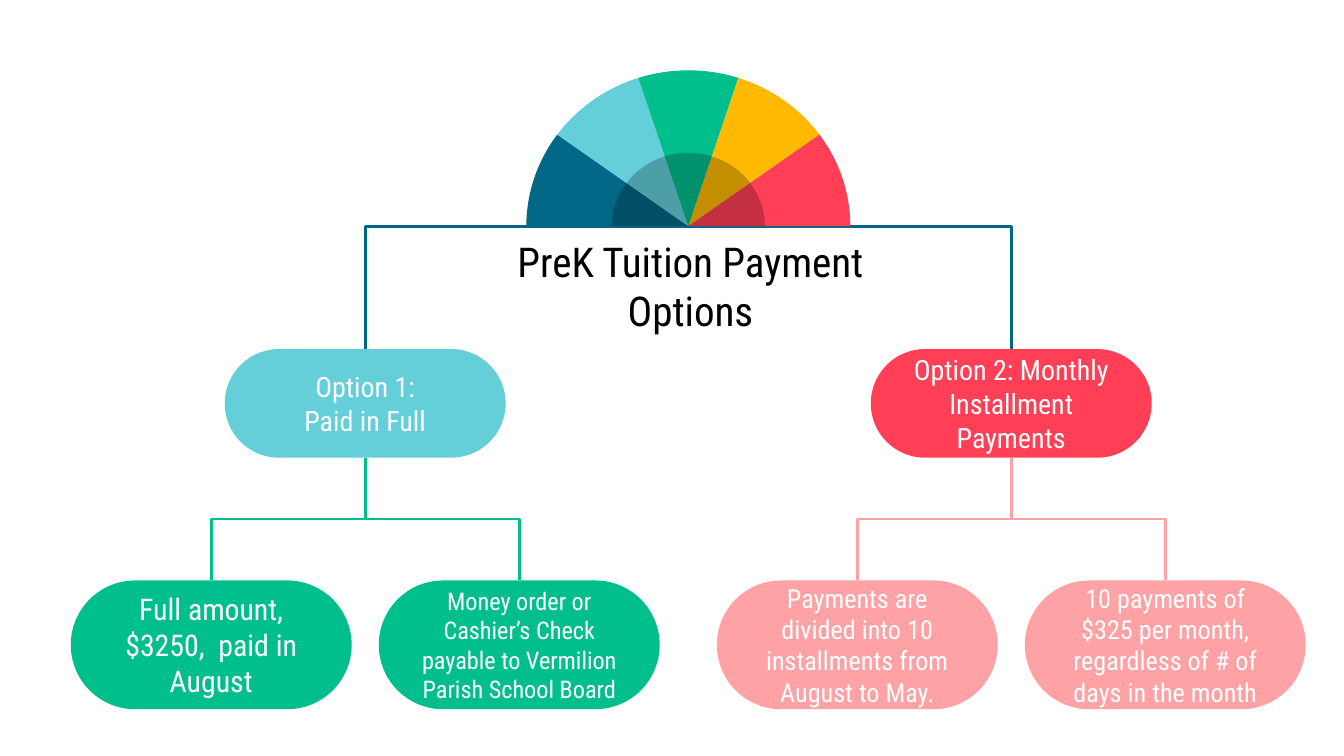
import math

from lxml import etree
from pptx import Presentation
from pptx.dml.color import RGBColor
from pptx.enum import shapes, text
from pptx.oxml.ns import qn
from pptx.util import Pt

FONT = "Roboto Condensed"
NAVY, SKY, GREEN, AMBER, RED, PINK = "016786", "64CFD9", "01BF8D", "FFB900", "FF3F56", "FFA2A6"
HUB_X, HUB_Y = 368.8, 121.2
NODE_WIDTH = 150.5
BRANCHES = [
    (37.9, SKY, GREEN, ("Option 1:\nPaid in Full", 15), [
        ("Full amount, $3250,  paid in August", 16),
        ("Money order or Cashier’s Check payable to Vermilion Parish School Board", 13)]),
    (384, RED, PINK, ("Option 2: Monthly Installment Payments", 15), [
        ("Payments are divided into 10 installments from August to May.", 14),
        ("10 payments of $325 per month, regardless of # of days in the month", 14)]),
]


def color(value):
    """Turn a hex string into a colour."""
    return RGBColor.from_string(value)


def paint(shape, fill, opacity=None):
    """Give a shape a plain fill without line or shadow."""
    shape.shadow.inherit = False
    shape.line.fill.background()
    shape.fill.solid()
    shape.fill.fore_color.rgb = color(fill)
    if opacity is not None:
        tint = shape.fill._xPr.find(f"{qn('a:solidFill')}/{qn('a:srgbClr')}")
        etree.SubElement(tint, qn("a:alpha")).set("val", str(opacity * 1000))


def write(shape, content, size, ink, anchor):
    """Put centred text into a shape with even margins."""
    frame = shape.text_frame
    frame.word_wrap = True
    frame.auto_size = text.MSO_AUTO_SIZE.NONE
    frame.vertical_anchor = anchor
    frame.margin_left = frame.margin_right = frame.margin_top = frame.margin_bottom = Pt(7.2)
    frame.text = content
    for paragraph in frame.paragraphs:
        paragraph.alignment = text.PP_ALIGN.CENTER
        for run in paragraph.runs:
            run.font.name, run.font.size = FONT, Pt(size)
            run.font.color.rgb = color(ink)


def add_node(slide, left, top, height, fill, label):
    """Add one pill with its label."""
    node = slide.shapes.add_shape(shapes.MSO_SHAPE.ROUNDED_RECTANGLE,
                                  Pt(left), Pt(top), Pt(NODE_WIDTH), Pt(height))
    node.adjustments[0] = 0.5
    paint(node, fill)
    write(node, *label, "FFFFFF", text.MSO_ANCHOR.MIDDLE)
    return node


def add_elbow(slide, start, end, ink):
    """Add an elbow connector between two points."""
    elbow = slide.shapes.add_connector(shapes.MSO_CONNECTOR.ELBOW, *start, *end)
    elbow.line.color.rgb = color(ink)
    elbow.line.width = Pt(1.5)
    etree.SubElement(elbow._element.spPr, qn("a:effectLst"))
    return elbow


def join_down(slide, parent, child, ink):
    """Join the bottom of a parent to the top of a child, leaving vertically."""
    start = (parent.left + parent.width // 2, parent.top + parent.height)
    end = (child.left + child.width // 2, child.top)
    elbow = add_elbow(slide, start, end, ink)
    elbow.begin_connect(parent, 2)
    elbow.end_connect(child, 0)
    run, drop = abs(end[0] - start[0]), end[1] - start[1]
    elbow.left = (start[0] + end[0] - drop) // 2
    elbow.top = (start[1] + end[1] - run) // 2
    elbow.width, elbow.height = drop, run
    rightward = end[0] > start[0]
    frame = elbow._element.spPr.find(qn("a:xfrm"))
    frame.set("rot", str((270 if rightward else 90) * 60000))
    frame.set("flipH", str(int(rightward)))


def add_branch(slide, left, top, fill, leaf_fill, label, leaves):
    """Add an option, its two leaves and all lines leading to them."""
    gap = 14.5
    width = 2 * NODE_WIDTH + gap
    option = add_node(slide, left + (width - NODE_WIDTH) / 2, top, 58.2, fill, label)
    trunk = add_elbow(slide, (Pt(HUB_X), Pt(HUB_Y)),
                      (option.left + option.width // 2, option.top), NAVY)
    trunk._element.spPr.find(qn("a:prstGeom")).set("prst", "bentConnector2")
    for index, leaf_label in enumerate(leaves):
        leaf = add_node(slide, left + index * (NODE_WIDTH + gap), top + 124, 69,
                        leaf_fill, leaf_label)
        join_down(slide, option, leaf, leaf_fill)


def add_wedge(group, radii, angles, fill, opacity=None):
    """Add a sector around the hub with one curve between neighbouring angles."""
    def rim_point(angle, reach=0):
        """Find a point on the rim, moved along its tangent by a reach."""
        across = math.cos(angle) - reach * math.sin(angle)
        upward = math.sin(angle) + reach * math.cos(angle)
        return Pt(HUB_X - radii[0] * across), Pt(HUB_Y - radii[1] * upward)

    turns = [math.radians(angle) for angle in angles]
    points = [rim_point(turns[0])]
    for first, last in zip(turns, turns[1:]):
        reach = 4 / 3 * math.tan((last - first) / 4)
        points += [rim_point(first, reach), rim_point(last, -reach), rim_point(last)]
    builder = group.shapes.build_freeform(Pt(HUB_X), Pt(HUB_Y))
    builder.add_line_segments(points, close=True)
    wedge = builder.convert_to_shape()
    segments = list(wedge._element.spPr.iter(qn("a:lnTo")))[1:len(points)]
    for index in range(0, len(segments), 3):
        curve = etree.Element(qn("a:cubicBezTo"))
        segments[index].addprevious(curve)
        for segment in segments[index:index + 3]:
            curve.append(segment[0])
            segment.getparent().remove(segment)
    paint(wedge, fill, opacity)


def add_fan(slide):
    """Add the five-colour half disc with its shaded core."""
    group = slide.shapes.add_group_shape()
    sectors = [(0, 36), (36, 72), (72, 90, 108), (108, 144), (144, 180)]
    for angles, fill in zip(sectors, [NAVY, SKY, GREEN, AMBER, RED]):
        add_wedge(group, (86.8, 83.5), angles, fill)
    for angles in sectors:
        add_wedge(group, (41, 39.3), angles, "000000", 23)


def add_title(slide, left, top, width, height):
    """Place and format the title placeholder."""
    title = slide.shapes.title
    title.left, title.top, title.width, title.height = Pt(left), Pt(top), Pt(width), Pt(height)
    write(title, "PreK Tuition Payment Options", 22, "000000", text.MSO_ANCHOR.TOP)


def main():
    """Build and save the payment options slide."""
    presentation = Presentation()
    presentation.slide_width, presentation.slide_height = Pt(720), Pt(405)
    slide = presentation.slides.add_slide(presentation.slide_layouts[5])
    add_title(slide, 261.2, 119.5, 217.4, 67.7)
    for left, fill, leaf_fill, label, leaves in BRANCHES:
        add_branch(slide, left, 187, fill, leaf_fill, label, leaves)
    add_fan(slide)
    presentation.save("out.pptx")


if __name__ == "__main__":
    main()
